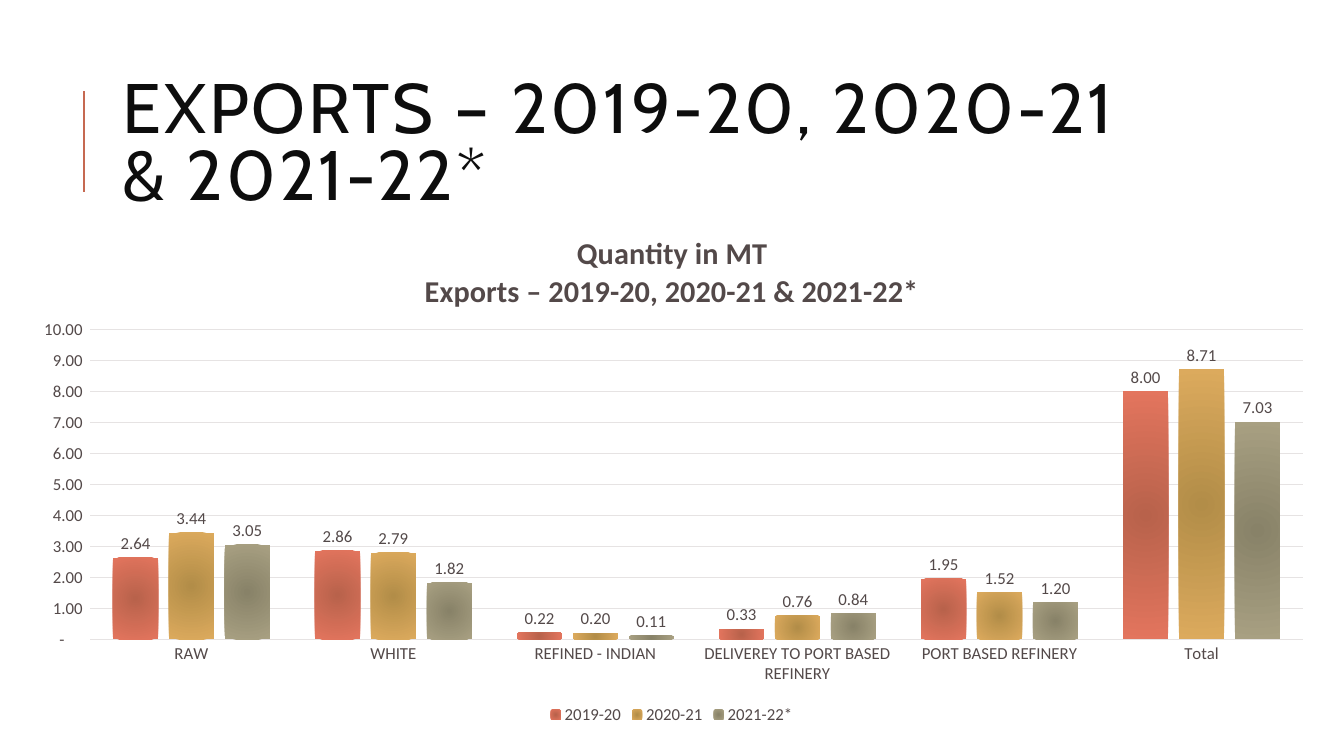
import pptx
import pptx.chart.data
import pptx.dml.color
import pptx.enum.chart
import pptx.enum.shapes
import pptx.enum.text
import pptx.oxml
import pptx.oxml.ns
import pptx.util
from lxml import etree

NUMBER_FORMAT = r'_(* #,##0.00_);_(* \(#,##0.00\);_(* "-"??_);_(@_)'
TEXT, GRID = "534949", "E6E3E3"
CATEGORIES = ["RAW", "WHITE", "REFINED - INDIAN", "DELIVEREY TO PORT BASED REFINERY",
              "PORT BASED REFINERY", "Total"]
SERIES = [
    ("2019-20", (2.64, 2.86, 0.22, 0.33, 1.95, 8.00), "B8624B", "E3755E"),
    ("2020-21", (3.44, 2.79, 0.20, 0.76, 1.52, 8.71), "B28D48", "DCAA5D"),
    ("2021-22*", (3.05, 1.82, 0.11, 0.84, 1.20, 7.03), "888268", "A8A082"),
]


def rgb(value):
    """Turn a hex string into a colour."""
    return pptx.dml.color.RGBColor.from_string(value)


def style_font(font, size, color, name="Calibri", bold=False):
    """Set the look of a font."""
    font.size, font.name, font.bold = pptx.util.Pt(size), name, bold
    font.color.rgb = rgb(color)


def add_text(p, text, spacing=0, **look):
    """Add a formatted run to a paragraph."""
    r = p.add_run()
    r.text = text
    style_font(r.font, **look)
    if spacing:
        r.font._element.set("spc", str(spacing * 100))


def set_line(line, color, width):
    """Give a line its colour and width."""
    line.color.rgb = rgb(color)
    line.width = pptx.util.Pt(width)


def set_layout(parent, index, **values):
    """Place a chart part by fractions of the chart area."""
    qn = pptx.oxml.ns.qn
    for old in parent.findall(qn("c:layout")):
        parent.remove(old)
    layout = etree.Element(qn("c:layout"))
    manual = etree.SubElement(layout, qn("c:manualLayout"))
    if "w" in values:
        etree.SubElement(manual, qn("c:layoutTarget"), val="inner")
    for key in ("x", "y"):
        etree.SubElement(manual, qn(f"c:{key}Mode"), val="edge")
    for key, value in values.items():
        etree.SubElement(manual, qn(f"c:{key}"), val=str(value))
    parent.insert(index, layout)


def set_radial_fill(fmt, inner, outer):
    """Fill a chart part with a circular gradient."""
    fmt.fill.background()
    sp_pr = fmt.fill._xPr
    stops = "".join(f'<a:gs pos="{pos}"><a:srgbClr val="{color}"/></a:gs>'
                    for pos, color in ((0, inner), (100000, outer)))
    grad = pptx.oxml.parse_xml(
        f'<a:gradFill {pptx.oxml.ns.nsdecls("a")} rotWithShape="1"><a:gsLst>{stops}</a:gsLst>'
        '<a:path path="circle"><a:fillToRect l="100000" t="100000" r="100000" b="100000"/>'
        '</a:path></a:gradFill>')
    sp_pr.replace(sp_pr.find(pptx.oxml.ns.qn("a:noFill")), grad)
    fmt.line.fill.background()


def add_heading(slide, x, y, w, h):
    """Add the slide heading with the rule at its left."""
    inch = pptx.util.Inches
    rule = slide.shapes.add_connector(
        pptx.enum.shapes.MSO_CONNECTOR.STRAIGHT,
        inch(x - 0.29), inch(y + 1.26), inch(x - 0.29), inch(y + 0.26))
    set_line(rule.line, "C66951", 1.5)
    etree.SubElement(rule._element.spPr, pptx.oxml.ns.qn("a:effectLst"))
    tf = slide.shapes.add_textbox(inch(x), inch(y), inch(w), inch(h)).text_frame
    tf.word_wrap = True
    tf.vertical_anchor = pptx.enum.text.MSO_ANCHOR.MIDDLE
    p = tf.paragraphs[0]
    p.line_spacing = 0.8
    add_text(p, "EXPORTS – 2019-20, 2020-21 & 2021-22*", spacing=2,
             size=50, color="0D0D0D", name="Cabin")


def style_axes(chart):
    """Format the category and value axes."""
    for axis in (chart.category_axis, chart.value_axis):
        axis.major_tick_mark = axis.minor_tick_mark = pptx.enum.chart.XL_TICK_MARK.NONE
        style_font(axis.tick_labels.font, 12, TEXT)
    set_line(chart.category_axis.format.line, GRID, 0.75)
    axis = chart.value_axis
    axis.minimum_scale, axis.maximum_scale, axis.major_unit = 0, 10, 1
    axis.format.line.fill.background()
    set_line(axis.major_gridlines.format.line, GRID, 0.75)
    axis.tick_labels.number_format = NUMBER_FORMAT
    axis.tick_labels.number_format_is_linked = False


def add_exports_chart(slide, x, y, w, h):
    """Add the clustered columns of exports by type and year."""
    xl = pptx.enum.chart
    data = pptx.chart.data.CategoryChartData(number_format=NUMBER_FORMAT)
    data.categories = CATEGORIES
    for name, values, _, _ in SERIES:
        data.add_series(name, values)
    box = [pptx.util.Inches(v) for v in (x, y, w, h)]
    chart = slide.shapes.add_chart(xl.XL_CHART_TYPE.COLUMN_CLUSTERED, *box, data).chart
    style_font(chart.font, 10, "000000")

    title = chart.chart_title
    tf = title.text_frame
    add_text(tf.paragraphs[0], "Quantity in MT", size=21.6, color=TEXT, bold=True)
    add_text(tf.add_paragraph(), "Exports – 2019-20, 2020-21 & 2021-22*",
             size=21.6, color=TEXT, bold=True)
    title.include_in_layout = False
    set_layout(title._element, 1, x=0.31, y=0.04)

    style_axes(chart)
    plot = chart.plots[0]
    plot.gap_width, plot.overlap, plot.vary_by_categories = 100, -24, False
    set_layout(plot._element.getparent(), 0, x=0.058, y=0.231, w=0.922, h=0.597)
    for series, (_, _, inner, outer) in zip(plot.series, SERIES):
        set_radial_fill(series.format, inner, outer)
        labels = series.data_labels
        labels.show_value = True
        labels.position = xl.XL_LABEL_POSITION.OUTSIDE_END
        labels.number_format = NUMBER_FORMAT
        labels.number_format_is_linked = False
        style_font(labels.font, 12, TEXT)

    chart.has_legend = True
    chart.legend.position = xl.XL_LEGEND_POSITION.BOTTOM
    chart.legend.include_in_layout = False
    style_font(chart.legend.font, 12, TEXT)


def main():
    """Build and save the slide."""
    prs = pptx.Presentation()
    prs.slide_width, prs.slide_height = pptx.util.Inches(13.33), pptx.util.Inches(7.5)
    slide = prs.slides.add_slide(prs.slide_layouts[6])
    add_heading(slide, 1.12, 0.64, 10.63, 1.64)
    add_exports_chart(slide, 0.14, 2.08, 13.04, 5.15)
    prs.save("out.pptx")


if __name__ == "__main__":
    main()
